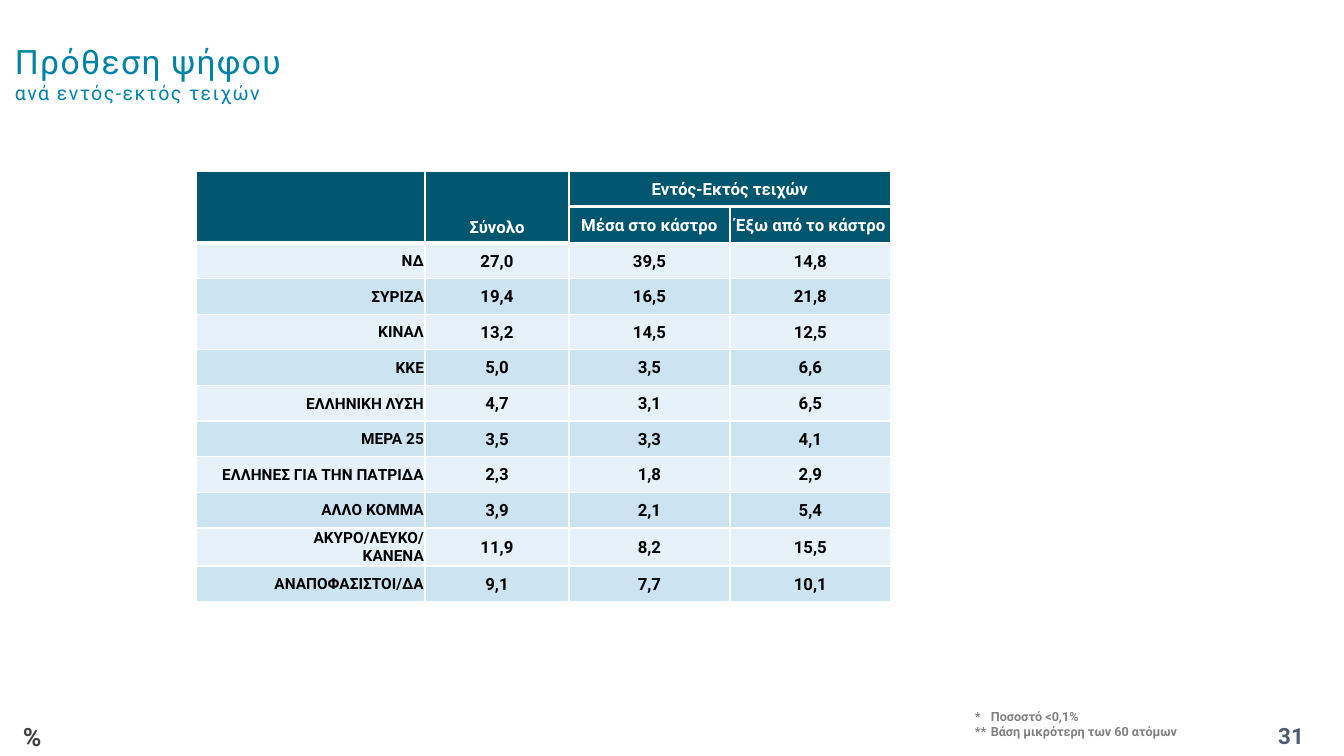
from lxml.etree import SubElement
from pptx import Presentation
from pptx.dml.color import RGBColor
from pptx.enum.text import MSO_ANCHOR, PP_ALIGN
from pptx.oxml.ns import qn
from pptx.util import Emu, Pt

WIDE, HIGH = 1344, 756
SCALE = 12192000 / WIDE
TEAL, WHITE, BLACK, GREY = "0082A5", "FFFFFF", "000000", "808080"
HEAD = "00566E"
BANDS = ("E7F1F9", "CCE3F2")
LEFT, MID, RIGHT = PP_ALIGN.LEFT, PP_ALIGN.CENTER, PP_ALIGN.RIGHT

COLS = (229, 144, 161, 161)
HEADS = [
    ("", "Σύνολο", "Εντός-Εκτός τειχών", ""),
    ("", "", "Μέσα στο κάστρο", "Έξω από το κάστρο"),
]
VOTES = [
    ("ΝΔ", "27,0", "39,5", "14,8"),
    ("ΣΥΡΙΖΑ", "19,4", "16,5", "21,8"),
    ("ΚΙΝΑΛ", "13,2", "14,5", "12,5"),
    ("ΚΚΕ", "5,0", "3,5", "6,6"),
    ("ΕΛΛΗΝΙΚΗ ΛΥΣΗ", "4,7", "3,1", "6,5"),
    ("ΜΕΡΑ 25", "3,5", "3,3", "4,1"),
    ("ΕΛΛΗΝΕΣ ΓΙΑ ΤΗΝ ΠΑΤΡΙΔΑ", "2,3", "1,8", "2,9"),
    ("ΑΛΛΟ ΚΟΜΜΑ", "3,9", "2,1", "5,4"),
    ("ΑΚΥΡΟ/ΛΕΥΚΟ/\nΚΑΝΕΝΑ", "11,9", "8,2", "15,5"),
    ("ΑΝΑΠΟΦΑΣΙΣΤΟΙ/ΔΑ", "9,1", "7,7", "10,1"),
]


def px(n):
    return Emu(round(n * SCALE))


def hue(code):
    return RGBColor.from_string(code)


def put(item, vals):
    for key, val in vals.items():
        setattr(item, key, val)


def heavy(row, col):
    """Tell whether the rule below a cell is the thick header rule."""
    return row == 0 or (row == 1 and col < 2)


class Page:
    def __init__(self, deck, font):
        self.font = font
        self.slide = deck.slides.add_slide(deck.slide_layouts[6])

    def run(self, para, text, size, color, bold=True, track=0):
        """Add a styled run; track is letter spacing in points."""
        run = para.add_run()
        run.text = text
        put(run.font, {"name": self.font, "size": Pt(size), "bold": bold})
        run.font.color.rgb = hue(color)
        if track:
            run._r.get_or_add_rPr().set("spc", str(track * 100))

    def box(self, x, y, w, h, anchor=MSO_ANCHOR.TOP):
        frame = self.slide.shapes.add_textbox(px(x), px(y), px(w), px(h)).text_frame
        put(frame, {"word_wrap": True, "vertical_anchor": anchor})
        return frame

    def fill(self, frame, text, size, color, align=LEFT, hang=0):
        """Write one paragraph per line, with an optional hanging indent."""
        for i, line in enumerate(text.split("\n")):
            para = frame.add_paragraph() if i else frame.paragraphs[0]
            para.alignment = align
            if hang:
                props = para._p.get_or_add_pPr()
                props.set("marL", str(px(hang)))
                props.set("indent", str(-px(hang)))
            self.run(para, line, size, color)

    def title(self, main, sub, *area):
        para = self.box(*area, MSO_ANCHOR.MIDDLE).paragraphs[0]
        self.run(para, main, 24, TEAL, False, 1)
        para.add_line_break()
        self.run(para, sub, 14, TEAL, False, 1)

    def edge(self, cell, row, col):
        props = cell._tc.get_or_add_tcPr()
        sides = {"L": 1, "R": 1,
                 "T": 3 if row and heavy(row - 1, col) else 1,
                 "B": 3 if heavy(row, col) else 1}
        for side, width in sides.items():
            line = SubElement(props, qn("a:ln" + side), w=str(Pt(width)))
            solid = SubElement(line, qn("a:solidFill"))
            SubElement(solid, qn("a:srgbClr"), val=WHITE)

    def paint(self, cell, color, alpha=100):
        cell.fill.solid()
        cell.fill.fore_color.rgb = hue(color)
        if alpha < 100:
            tint = cell._tc.tcPr.find(".//" + qn("a:srgbClr"))
            SubElement(tint, qn("a:alpha"), val=str(alpha * 1000))

    def table(self, x, y, high, cols, heads, body):
        rows = heads + body
        grid = self.slide.shapes.add_table(
            len(rows), len(cols), px(x), px(y), px(sum(cols)), px(high)).table
        put(grid, {"first_row": False, "horz_banding": False})
        for col, wide in zip(grid.columns, cols):
            col.width = px(wide)
        for r, row in enumerate(rows):
            grid.rows[r].height = px(high / len(rows))
            top = r < len(heads)
            for c, text in enumerate(row):
                cell = grid.cell(r, c)
                low = top and c < 2
                put(cell, {
                    "margin_left": px(1), "margin_right": px(1),
                    "margin_top": px(1), "margin_bottom": px(5 if low else 0),
                    "vertical_anchor": MSO_ANCHOR.BOTTOM if low else MSO_ANCHOR.MIDDLE,
                })
                self.edge(cell, r, c)
                self.paint(cell, HEAD if top else BANDS[r % 2], 50 if top else 100)
                if text:
                    name = c == 0
                    self.fill(cell.text_frame, text, 11 if name else 12,
                              WHITE if top else BLACK, RIGHT if name else MID)
        for a, b in (((0, 0), (1, 0)), ((0, 1), (1, 1)), ((0, 2), (0, 3))):
            grid.cell(*a).merge(grid.cell(*b))


def main():
    deck = Presentation()
    put(deck, {"slide_width": px(WIDE), "slide_height": px(HIGH)})
    page = Page(deck, "Roboto")
    page.title("Πρόθεση ψήφου", "ανά εντός-εκτός τειχών", 5, 13, 1000, 119)
    page.fill(page.box(1238, 716, 106, 40, MSO_ANCHOR.MIDDLE), "31", 16, "4E5B6F", MID)
    page.fill(page.box(13, 716, 72, 40), "%", 18, "404040")
    page.table(196, 171, 428, COLS, HEADS, VOTES)
    notes = "*\tΠοσοστό <0,1%\n**\tΒάση μικρότερη των 60 ατόμων"
    page.fill(page.box(965, 704, 270, 40), notes, 9, GREY, hang=16)
    deck.save("out.pptx")


if __name__ == "__main__":
    main()
